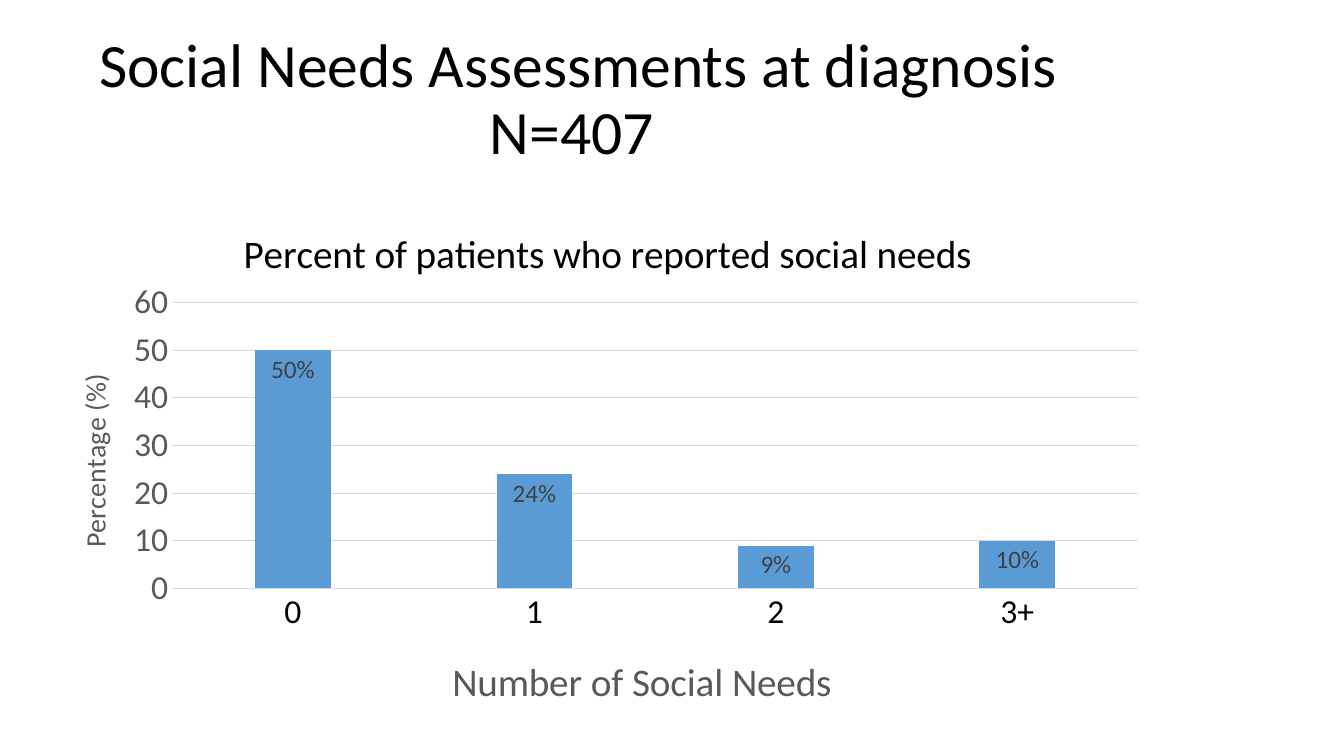
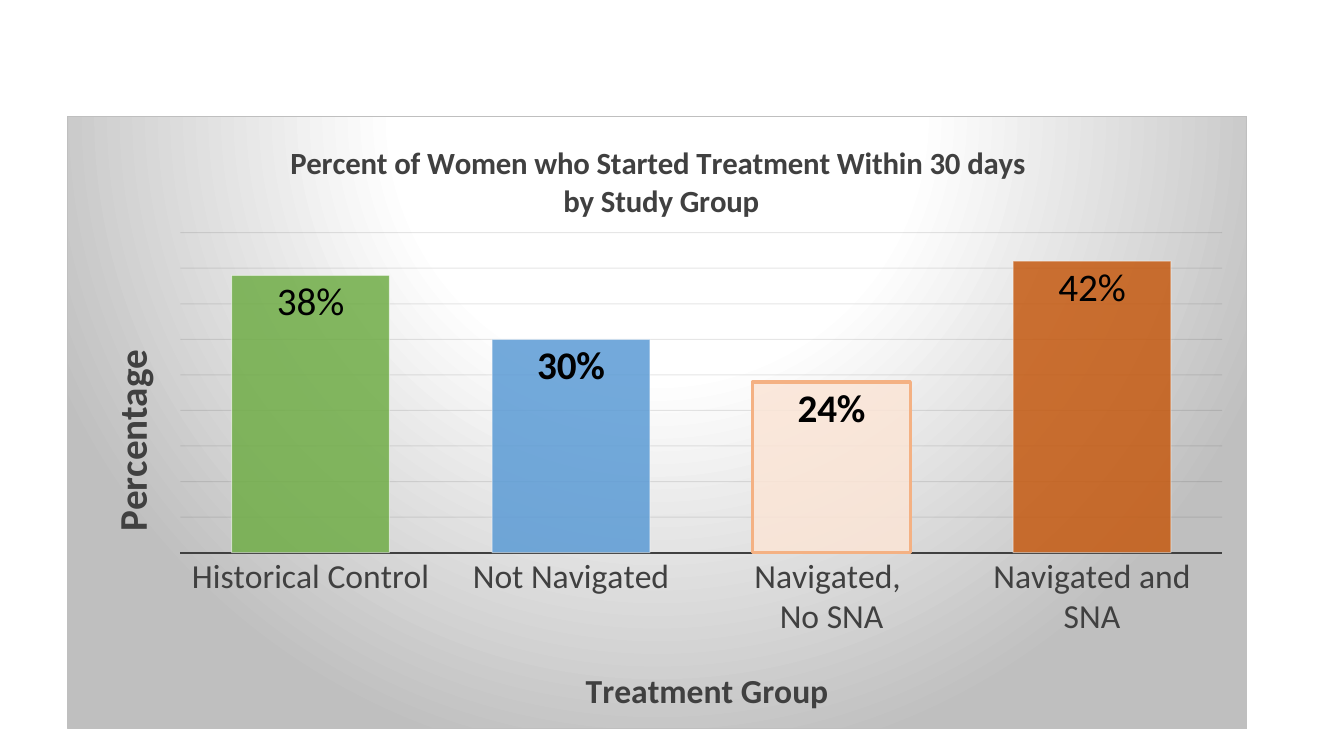
from dataclasses import dataclass

from lxml.etree import SubElement
from pptx import Presentation
from pptx.chart.data import CategoryChartData
from pptx.dml.color import RGBColor
from pptx.enum.chart import XL_CHART_TYPE, XL_LABEL_POSITION, XL_TICK_LABEL_POSITION, XL_TICK_MARK
from pptx.enum.text import MSO_ANCHOR, PP_ALIGN
from pptx.oxml import parse_xml
from pptx.oxml.ns import nsdecls, qn
from pptx.util import Pt


@dataclass(frozen=True)
class Theme:
    font: str = "Calibri"
    black: str = "000000"
    dark: str = "404040"
    grey: str = "595959"
    rule: str = "D9D9D9"
    grid: str = "0D0D0D"
    edge: str = "BFBFBF"
    white: str = "FFFFFF"
    blue: str = "5B9BD5"
    green: str = "70AD47"
    peach: str = "FBE5D6"
    peach_line: str = "F4B183"
    orange: str = "C55A11"
    heading: int = 44
    large: int = 28
    medium: int = 24
    subtitle: int = 22
    small: int = 20
    label: int = 18
    base: int = 10


class Deck:
    """Holds the theme and the current slide, and draws its elements."""

    def __init__(self, theme):
        self.theme = theme
        self.prs = Presentation()
        self.prs.slide_width, self.prs.slide_height = Pt(960), Pt(540)

    def slide(self):
        self.s = self.prs.slides.add_slide(self.prs.slide_layouts[6])

    def style(self, font, size, color, bold=False):
        font.name, font.size, font.bold = self.theme.font, Pt(size), bold
        font.color.rgb = RGBColor.from_string(color)

    def text_run(self, p, text, size, color, bold=False):
        r = p.add_run()
        r.text = text
        self.style(r.font, size, color, bold)

    def fill(self, fill, color, alpha=100):
        fill.solid()
        fill.fore_color.rgb = RGBColor.from_string(color)
        if alpha < 100:
            clr = fill._xPr.find(qn("a:solidFill"))[0]
            SubElement(clr, qn("a:alpha")).set("val", str(alpha * 1000))

    def line(self, line, color, width, alpha=100):
        line.width = Pt(width)
        self.fill(line.fill, color, alpha)

    def title(self, lines, left, top, width, height):
        sp = self.s.shapes.add_textbox(Pt(left), Pt(top), Pt(width), Pt(height))
        tf = sp.text_frame
        tf.word_wrap = True
        tf.vertical_anchor = MSO_ANCHOR.MIDDLE
        p = tf.paragraphs[0]
        p.alignment, p.line_spacing = PP_ALIGN.CENTER, 0.9
        for i, text in enumerate(lines):
            if i:
                p.add_line_break()
            self.text_run(p, text, self.theme.heading, self.theme.black)

    def layout(self, parent, index, box, target=""):
        for old in parent.findall(qn("c:layout")):
            parent.remove(old)
        places = "".join(f'<c:{k} val="{v / whole:.4f}"/>'
                         for k, v, whole in zip("xywh", box, self.chart_size * 2))
        parent.insert(index, parse_xml(
            f'<c:layout {nsdecls("c")}><c:manualLayout>{target}<c:xMode val="edge"/>'
            f'<c:yMode val="edge"/>{places}</c:manualLayout></c:layout>'))

    def caption(self, title, lines, size, color, at, bold=False, upright=False):
        tf = title.text_frame
        for i, text in enumerate(lines):
            p = tf.add_paragraph() if i else tf.paragraphs[0]
            self.text_run(p, text, size, color, bold)
        body = tf._txBody.find(qn("a:bodyPr"))
        body.set("rot", "-5400000" if upright else "0")
        body.set("vert", "horz")
        self.layout(title._element, 1, at)

    def columns(self, box, categories, values, number_format, gap, plot_box):
        data = CategoryChartData(number_format=number_format)
        data.categories = categories
        data.add_series("Series 1", values)
        chart = self.s.shapes.add_chart(
            XL_CHART_TYPE.COLUMN_CLUSTERED, *map(Pt, box), data).chart
        self.chart_size = box[2:]
        self.style(chart.font, self.theme.base, self.theme.black)
        chart.has_legend = False
        plot = chart.plots[0]
        plot.gap_width, plot.vary_by_categories = gap, False
        plot.series[0].invert_if_negative = False
        self.layout(chart._chartSpace.find(".//" + qn("c:plotArea")), 0, plot_box,
                    '<c:layoutTarget val="inner"/>')
        return chart

    def axes(self, chart, color, rule, grid, top, step):
        cat, val = chart.category_axis, chart.value_axis
        for axis in (cat, val):
            axis.major_tick_mark = axis.minor_tick_mark = XL_TICK_MARK.NONE
            self.style(axis.tick_labels.font, self.theme.medium, color)
        self.line(cat.format.line, *rule)
        val.format.line.fill.background()
        val.minimum_scale, val.maximum_scale, val.major_unit = 0, top, step
        val.has_major_gridlines = True
        self.line(val.major_gridlines.format.line, *grid)

    def labels(self, chart, number_format, size, color, bold=False):
        dl = chart.plots[0].series[0].data_labels
        dl.show_value, dl.position = True, XL_LABEL_POSITION.INSIDE_END
        dl.number_format, dl.number_format_is_linked = number_format, False
        self.style(dl.font, size, color, bold)

    def point_label(self, chart, index, text, size, color):
        dl = chart.plots[0].series[0].points[index].data_label
        self.text_run(dl.text_frame.paragraphs[0], text, size, color)
        dl.position = XL_LABEL_POSITION.INSIDE_END

    def backdrop(self, chart):
        t = self.theme
        stops = "".join(f'<a:gs pos="{pos * 1000}"><a:srgbClr val="{c}"/></a:gs>'
                        for pos, c in ((0, t.white), (39, t.white), (100, t.edge)))
        chart._chartSpace.find(qn("c:chart")).addnext(parse_xml(
            f'<c:spPr {nsdecls("c", "a")}><a:gradFill><a:gsLst>{stops}</a:gsLst>'
            '<a:path path="circle"><a:fillToRect l="50000" t="-80000" r="50000" b="180000"/>'
            f'</a:path></a:gradFill><a:ln w="{Pt(0.75)}"><a:solidFill><a:srgbClr val="{t.edge}"/>'
            '</a:solidFill></a:ln></c:spPr>'))


def social_needs(deck):
    t = deck.theme
    deck.slide()
    deck.title(["Social Needs Assessments at diagnosis", "N=407 "], 15, 20, 797, 104)
    chart = deck.columns((30, 142.5, 799, 371), ["0", "1", "2", "3+"], [50, 24, 9, 10],
                         "General", 219, (93, 74, 690, 205))
    chart.plots[0].overlap = -27
    deck.fill(chart.plots[0].series[0].format.fill, t.blue)
    deck.axes(chart, t.grey, (t.rule, 0.75), (t.rule, 0.75), 60, 10)
    deck.style(chart.category_axis.tick_labels.font, t.medium, t.black)
    deck.labels(chart, '0"%"', t.label, t.dark)
    deck.caption(chart.chart_title, ["Percent of patients who reported social needs"],
                 t.large, t.black, (139, 15))
    deck.caption(chart.category_axis.axis_title, ["Number of Social Needs"],
                 t.large, t.grey, (288, 322))
    deck.caption(chart.value_axis.axis_title, ["Percentage (%)"],
                 t.small, t.grey, (20, 122), upright=True)


def treatment_start(deck):
    t = deck.theme
    deck.slide()
    groups = ["Historical Control", "Not Navigated", "Navigated, \nNo SNA", "Navigated and SNA"]
    chart = deck.columns((48, 83, 843, 438), groups, [0.39, 0.3, 0.24, 0.41],
                         "0%", 65, (80.5, 83, 745, 229))
    deck.backdrop(chart)
    deck.axes(chart, t.dark, (t.dark, 1.5), (t.grid, 0.75, 10), 0.45, 0.05)
    chart.value_axis.tick_label_position = XL_TICK_LABEL_POSITION.NONE
    deck.labels(chart, "0%", t.large, t.black, True)
    pale = (t.white, 0.75, 50)
    bars = [(t.green, pale), (t.blue, pale), (t.peach, (t.peach_line, 2.25)), (t.orange, pale)]
    for i, (color, outline) in enumerate(bars):
        fmt = chart.plots[0].series[0].points[i].format
        deck.fill(fmt.fill, color, 85)
        deck.line(fmt.line, *outline)
    for i, text in ((0, "38%"), (3, "42%")):
        deck.point_label(chart, i, text, t.large, t.black)
    deck.caption(chart.chart_title,
                 ["Percent of Women who Started Treatment Within 30 days ", "by Study Group"],
                 t.subtitle, t.dark, (157, 17), True)
    deck.caption(chart.category_axis.axis_title, ["Treatment Group"],
                 t.medium, t.dark, (366, 390), True)
    deck.caption(chart.value_axis.axis_title, ["Percentage"],
                 t.large, t.dark, (22, 162), True, upright=True)


def main():
    deck = Deck(Theme())
    social_needs(deck)
    treatment_start(deck)
    deck.prs.save("out.pptx")


if __name__ == "__main__":
    main()
